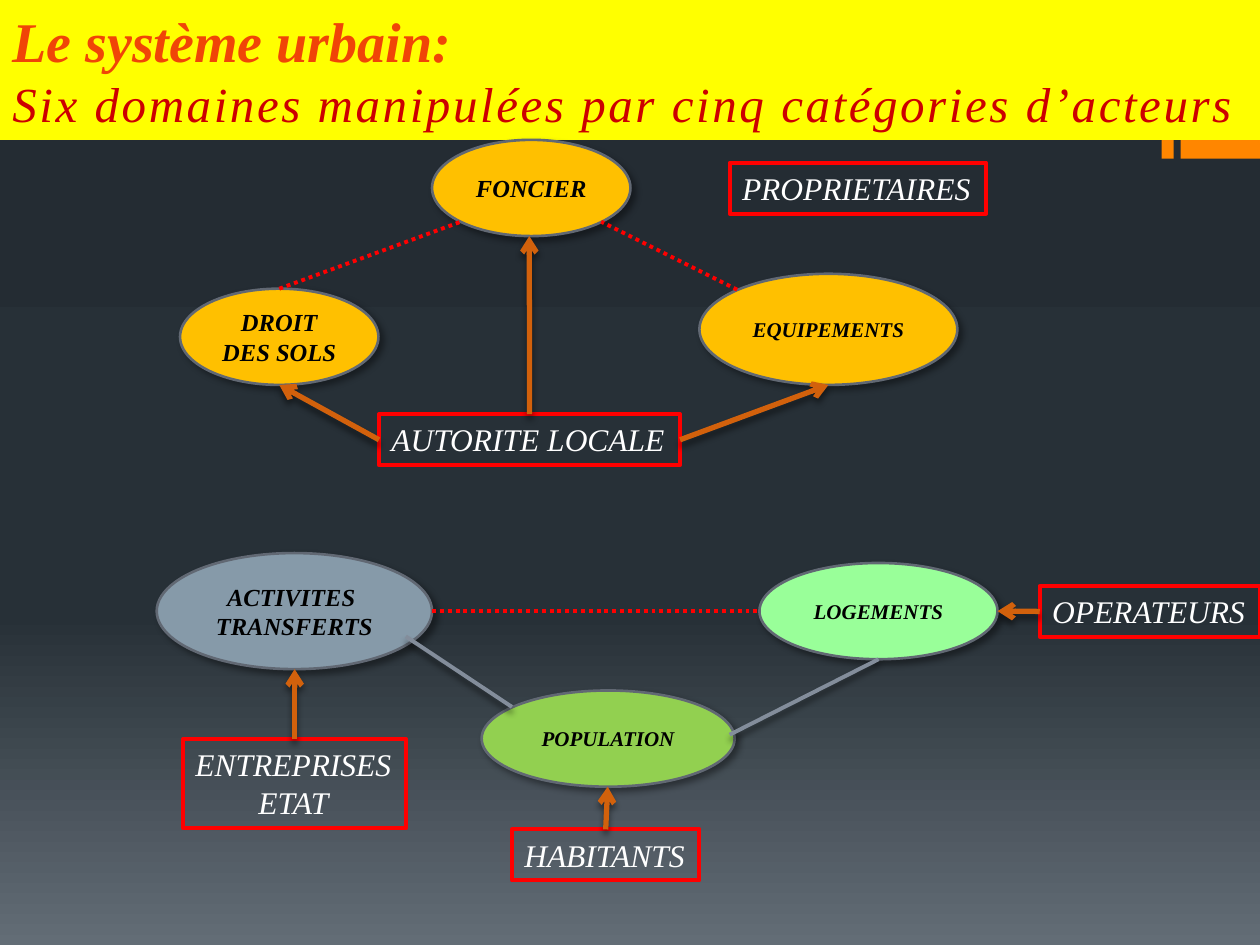
from copy import deepcopy

from lxml import etree
from pptx import Presentation
from pptx.dml.color import RGBColor
from pptx.enum.dml import MSO_LINE
from pptx.enum.shapes import MSO_CONNECTOR, MSO_SHAPE
from pptx.enum.text import MSO_ANCHOR, MSO_AUTO_SIZE, PP_ALIGN
from pptx.oxml.ns import qn
from pptx.util import Cm, Pt

RECT, OVAL = MSO_SHAPE.RECTANGLE, MSO_SHAPE.OVAL
STRAIGHT = MSO_CONNECTOR.STRAIGHT
DOTTED = MSO_LINE.ROUND_DOT
LEFT, CENTER = PP_ALIGN.LEFT, PP_ALIGN.CENTER
MIDDLE, TOP_ANCHOR = MSO_ANCHOR.MIDDLE, MSO_ANCHOR.TOP
FIT = MSO_AUTO_SIZE.SHAPE_TO_FIT_TEXT
TOP, LEFT_SIDE, RIGHT_SIDE = 0, 1, 3

NIGHT = RGBColor(0x24, 0x2C, 0x33)
DARK = RGBColor(0x27, 0x30, 0x37)
SLATE = RGBColor(0x63, 0x6D, 0x76)
ACCENT = RGBColor(0xFF, 0x86, 0x00)
YELLOW = RGBColor(0xFF, 0xFF, 0x00)
ORANGE = RGBColor(0xF0, 0x45, 0x07)
CRIMSON = RGBColor(0xCC, 0x00, 0x00)
AMBER = RGBColor(0xFF, 0xC0, 0x00)
GREEN = RGBColor(0x92, 0xD0, 0x50)
MINT = RGBColor(0x99, 0xFF, 0x99)
STEEL = RGBColor(0x86, 0x9A, 0xA9)
OUTLINE = RGBColor(0x61, 0x68, 0x73)
ARROW = RGBColor(0xD2, 0x61, 0x0C)
GREY = RGBColor(0x83, 0x8D, 0x9B)
RED = RGBColor(0xFF, 0x00, 0x00)
BLACK = RGBColor(0x00, 0x00, 0x00)
WHITE = RGBColor(0xFF, 0xFF, 0xFF)


def write(tf, lines, aligns, color, **fmt):
    for i, (line, align) in enumerate(zip(lines, aligns)):
        p = tf.paragraphs[0] if i == 0 else tf.add_paragraph()
        p.alignment = align
        r = p.add_run()
        r.text = line
        r.font.color.rgb = color
        for name, value in {"name": "Times New Roman", "italic": True, **fmt}.items():
            setattr(r.font, name, value)


def set_effect(shape, alpha=None, blur=0, angle=0):
    spPr = shape._element.spPr
    for old in spPr.findall(qn("a:effectLst")):
        spPr.remove(old)
    effects = etree.SubElement(spPr, qn("a:effectLst"))
    if alpha:
        shadow = etree.SubElement(
            effects, qn("a:outerShdw"), blurRad=str(Pt(blur)), dist=str(Pt(3)),
            dir=str(angle * 60000), rotWithShape="0")
        color = etree.SubElement(shadow, qn("a:srgbClr"), val="000000")
        etree.SubElement(color, qn("a:alpha"), val=str(alpha * 1000))


prs = Presentation()
prs.slide_width, prs.slide_height = Cm(25.4), Cm(19.05)
s = prs.slides.add_slide(prs.slide_layouts[6])

# Background gradient, three stops from top to bottom
fill = s.background.fill
fill.gradient()
fill.gradient_angle = 270
stops = s.element.find(".//" + qn("a:gsLst"))
stops.append(deepcopy(stops[-1]))
for stop, (pos, color) in zip(fill.gradient_stops,
                              [(0, NIGHT), (0.65, DARK), (1, SLATE)]):
    stop.position = pos
    stop.color.rgb = color

# Corner accents, then the title banner over them
for x, y, w, h, color in [(23.42, 1.6, 0.24, 1.6, ACCENT),
                          (23.8, 1.6, 1.6, 1.6, ACCENT),
                          (0, 0, 25.4, 2.82, YELLOW)]:
    banner = s.shapes.add_shape(RECT, Cm(x), Cm(y), Cm(w), Cm(h))
    banner.fill.solid()
    banner.fill.fore_color.rgb = color
    banner.line.fill.background()
    banner.shadow.inherit = False

tf = banner.text_frame
tf.word_wrap = True
tf.vertical_anchor = TOP_ANCHOR
write(tf, ["Le système urbain:"], [LEFT], ORANGE, size=Pt(32), bold=True)
p = tf.add_paragraph()
p.alignment = LEFT
r = p.add_run()
r.text = "Six domaines manipulées par cinq catégories d’acteurs"
r.font.color.rgb = CRIMSON
for name, value in {"name": "Times New Roman", "size": Pt(28), "italic": True}.items():
    setattr(r.font, name, value)
r.font._element.set("spc", "150")

# Six domains
for x, y, w, h, color, size, lines in [
    (8.71, 2.82, 4, 1.94, AMBER, 14, ["FONCIER"]),
    (9.71, 13.92, 5.1, 1.94, GREEN, 12, ["POPULATION"]),
    (15.31, 11.35, 4.8, 1.94, MINT, 12, ["LOGEMENTS"]),
    (3.16, 11.15, 5.55, 2.34, STEEL, 14, ["ACTIVITES ", "TRANSFERTS"]),
    (14.1, 5.52, 5.2, 2.24, AMBER, 12, ["EQUIPEMENTS"]),
    (3.63, 5.82, 4, 1.94, AMBER, 14, ["DROIT DES SOLS"]),
]:
    sp = s.shapes.add_shape(OVAL, Cm(x), Cm(y), Cm(w), Cm(h))
    sp.fill.solid()
    sp.fill.fore_color.rgb = color
    sp.line.color.rgb = OUTLINE
    sp.line.width = Pt(1.5)
    set_effect(sp, 40, 4, 45)
    tf = sp.text_frame
    tf.word_wrap = True
    tf.vertical_anchor = MIDDLE
    write(tf, lines, [CENTER] * len(lines), BLACK, size=Pt(size), bold=True)

# Five categories of actors
actors = {}
for x, y, w, h, lines in [
    (7.64, 8.35, 6.07, 1.03, ["AUTORITE LOCALE"]),
    (14.71, 3.28, 5.17, 1.03, ["PROPRIETAIRES"]),
    (20.96, 11.81, 4.44, 1.03, ["OPERATEURS"]),
    (10.32, 16.72, 3.78, 1.03, ["HABITANTS"]),
    (3.69, 14.9, 4.5, 1.8, ["ENTREPRISES", "ETAT"]),
]:
    sp = s.shapes.add_textbox(Cm(x), Cm(y), Cm(w), Cm(h))
    sp.line.color.rgb = RED
    sp.line.width = Pt(2.25)
    tf = sp.text_frame
    tf.word_wrap = False
    tf.auto_size = FIT
    write(tf, lines, [LEFT, CENTER], WHITE, size=Pt(18))
    actors[lines[0]] = sp

# Arrows from each actor to the domains it acts on
for actor, side, x, y in [
    ("AUTORITE LOCALE", TOP, 10.67, 4.76),
    ("AUTORITE LOCALE", LEFT_SIDE, 5.63, 7.76),
    ("AUTORITE LOCALE", RIGHT_SIDE, 16.7, 7.76),
    ("HABITANTS", TOP, 12.25, 15.86),
    ("ENTREPRISES", TOP, 5.94, 13.49),
    ("OPERATEURS", LEFT_SIDE, 20.11, 12.32),
]:
    c = s.shapes.add_connector(STRAIGHT, 0, 0, Cm(x), Cm(y))
    c.begin_connect(actors[actor], side)
    c.line.color.rgb = ARROW
    c.line.width = Pt(3)
    etree.SubElement(c.line._get_or_add_ln(), qn("a:tailEnd"), type="arrow")
    set_effect(c, 48, 3.8, 90)

# Links between domains: solid grey or dotted red
for x1, y1, x2, y2, dotted in [
    (8.18, 12.83, 10.32, 14.25, False),
    (14.71, 14.81, 17.71, 13.29, False),
    (8.71, 12.32, 15.31, 12.32, True),
    (5.63, 5.82, 9.29, 4.47, True),
    (14.86, 5.84, 12.12, 4.47, True),
]:
    c = s.shapes.add_connector(STRAIGHT, Cm(x1), Cm(y1), Cm(x2), Cm(y2))
    c.line.color.rgb = RED if dotted else GREY
    c.line.width = Pt(2.25)
    if dotted:
        c.line.dash_style = DOTTED
        set_effect(c)
    else:
        set_effect(c, 48, 3.8, 90)

prs.save("out.pptx")
